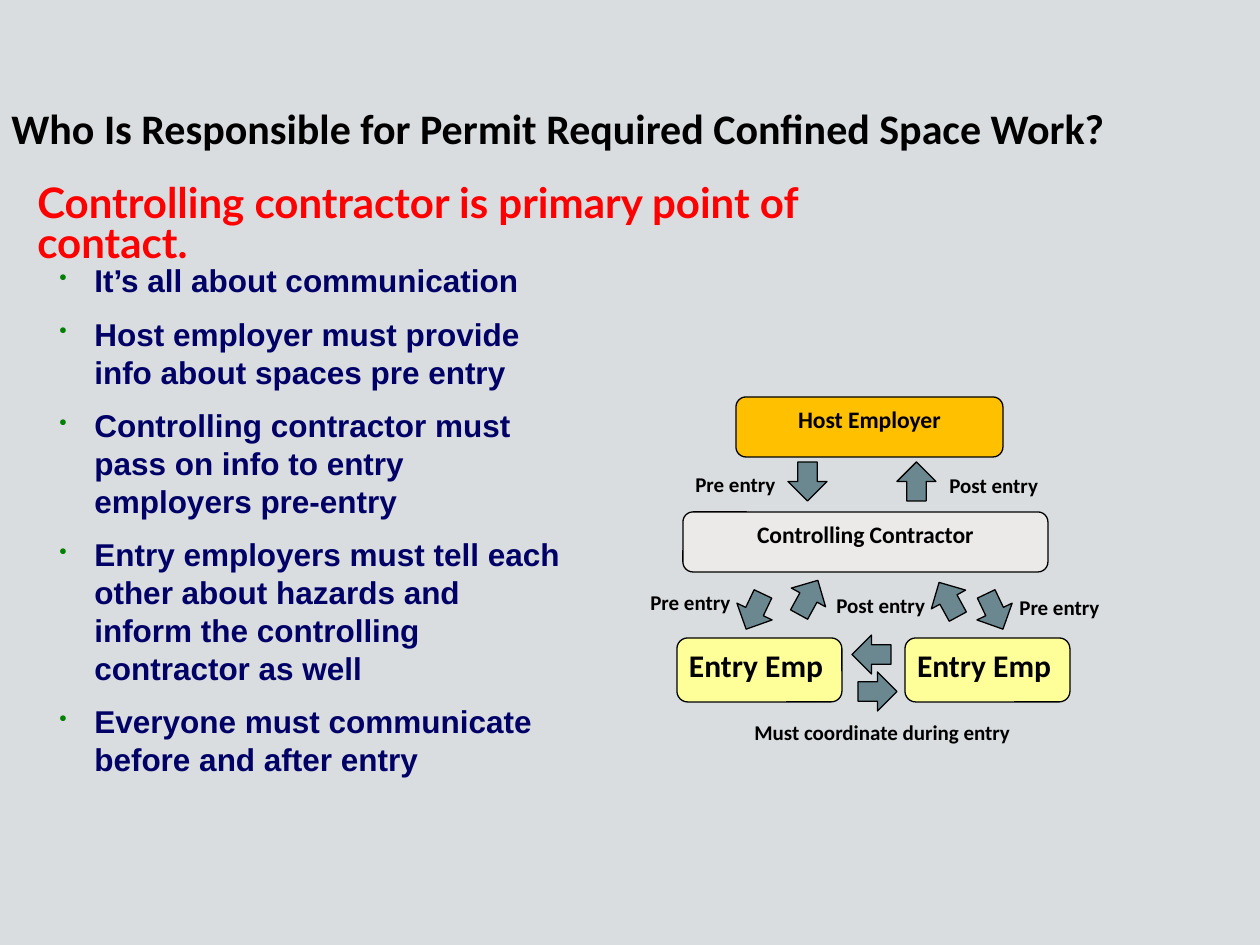
import dataclasses

import pptx
import pptx.dml.color
import pptx.enum.shapes
import pptx.enum.text
import pptx.oxml
import pptx.oxml.ns
import pptx.util

PX = 914400 / 126


def px(length):
    return pptx.util.Emu(round(length * PX))


def rgb(value):
    return pptx.dml.color.RGBColor.from_string(value)


@dataclasses.dataclass(frozen=True)
class Theme:
    background: str = "D9DDDF"
    ink: str = "000000"
    alert: str = "FF0000"
    body: str = "000066"
    bullet: str = "008000"
    host: str = "FFC000"
    contractor: str = "ECEAE8"
    entry: str = "FFFF99"
    arrow: str = "6B8891"
    heading_font: str = "Calibri"
    subtitle_font: str = "Lato"
    body_font: str = "Arial"
    title_size: float = 24
    body_size: float = 18
    box_size: float = 13.5
    label_size: float = 12
    outline: float = 0.75


class SlideBuilder:
    """Draws styled elements on the current slide."""

    def __init__(self, slide, theme):
        self.slide = slide
        self.theme = theme
        fill = slide.background.fill
        fill.solid()
        fill.fore_color.rgb = rgb(theme.background)

    def style(self, paragraph, size, color=None, name=None):
        font = paragraph.font
        font.size = pptx.util.Pt(size)
        font.name = name or self.theme.heading_font
        font.bold = True
        font.color.rgb = rgb(color or self.theme.ink)

    def frame(self, left, top, width, height):
        shape = self.slide.shapes.add_textbox(px(left), px(top), px(width), px(height))
        shape.text_frame.word_wrap = True
        return shape.text_frame

    def text(self, text, left, top, width, height, size, color=None, name=None, spacing=None):
        paragraph = self.frame(left, top, width, height).paragraphs[0]
        paragraph.text = text
        paragraph.line_spacing = spacing
        self.style(paragraph, size, color, name)

    def label(self, text, left, top, width=127):
        self.text(text, left, top, width, 38, self.theme.label_size)

    def bullets(self, items, left, top, width, height, indent):
        frame = self.frame(left, top, width, height)
        namespace = pptx.oxml.ns.nsdecls("a")
        for index, item in enumerate(items):
            paragraph = frame.add_paragraph() if index else frame.paragraphs[0]
            paragraph.text = item
            properties = paragraph._p.get_or_add_pPr()
            properties.set("marL", str(px(indent)))
            properties.set("indent", str(-px(indent)))
            for markup in (
                f'<a:buClr {namespace}><a:srgbClr val="{self.theme.bullet}"/></a:buClr>',
                f'<a:buSzPct {namespace} val="70000"/>',
                f'<a:buChar {namespace} char="•"/>',
            ):
                properties.append(pptx.oxml.parse_xml(markup))
            paragraph.space_after = pptx.util.Pt(9)
            self.style(paragraph, self.theme.body_size, self.theme.body, self.theme.body_font)

    def shape(self, kind, left, top, width, height, color):
        shape = self.slide.shapes.add_shape(kind, px(left), px(top), px(width), px(height))
        shape.shadow.inherit = False
        shape.fill.solid()
        shape.fill.fore_color.rgb = rgb(color)
        shape.line.color.rgb = rgb(self.theme.ink)
        shape.line.width = pptx.util.Pt(self.theme.outline)
        return shape

    def box(self, text, left, top, width, height, color, size, alignment):
        kind = pptx.enum.shapes.MSO_SHAPE.ROUNDED_RECTANGLE
        frame = self.shape(kind, left, top, width, height, color).text_frame
        frame.word_wrap = True
        frame.vertical_anchor = pptx.enum.text.MSO_ANCHOR.TOP
        frame.margin_left = frame.margin_right = px(9)
        frame.margin_top = frame.margin_bottom = px(5)
        paragraph = frame.paragraphs[0]
        paragraph.text = text
        paragraph.alignment = alignment
        self.style(paragraph, size)

    def arrow(self, left, top, rotation):
        kind = pptx.enum.shapes.MSO_SHAPE.UP_ARROW
        self.shape(kind, left, top, 39, 39, self.theme.arrow).rotation = rotation


def main():
    theme = Theme()
    presentation = pptx.Presentation()
    presentation.slide_width, presentation.slide_height = px(1260), px(945)
    slide = presentation.slides.add_slide(presentation.slide_layouts[6])
    builder = SlideBuilder(slide, theme)

    builder.text("Who Is Responsible for Permit Required Confined Space Work?",
                 -1, 96, 1278, 63, theme.title_size)
    builder.text("Controlling contractor is primary point of contact.",
                 25, 180, 896, 54, theme.title_size, theme.alert, theme.subtitle_font, 0.8)
    builder.bullets([
        "It’s all about communication",
        "Host employer must provide info about spaces pre entry",
        "Controlling contractor must pass on info to entry employers pre-entry",
        "Entry employers must tell each other about hazards and inform the controlling contractor as well",
        "Everyone must communicate before and after entry",
    ], 47, 255, 532, 459, 35)

    align = pptx.enum.text.PP_ALIGN
    builder.box("Host Employer", 736, 397, 267, 60, theme.host, theme.box_size, align.CENTER)
    builder.box("Controlling Contractor", 683, 512, 365, 60,
                theme.contractor, theme.box_size, align.CENTER)
    for left in (677, 905):
        builder.box("Entry Emp", left, 638, 165, 64, theme.entry, theme.body_size, align.LEFT)

    for left, top, rotation in (
        (788, 462, 180), (897, 462, 0),
        (735, 592, 205.4), (789, 578, 28.7),
        (975, 592, 154.6), (929, 580, 331.3),
        (852, 635, 270), (858, 672, 90),
    ):
        builder.arrow(left, top, rotation)

    for left, top in ((683, 465), (638, 583), (1007, 588)):
        builder.label("Pre entry", left, top)
    for left, top in ((937, 466), (824, 586)):
        builder.label("Post entry", left, top)
    builder.label("Must coordinate during entry", 742, 713, 316)
    presentation.save("out.pptx")


if __name__ == "__main__":
    main()
